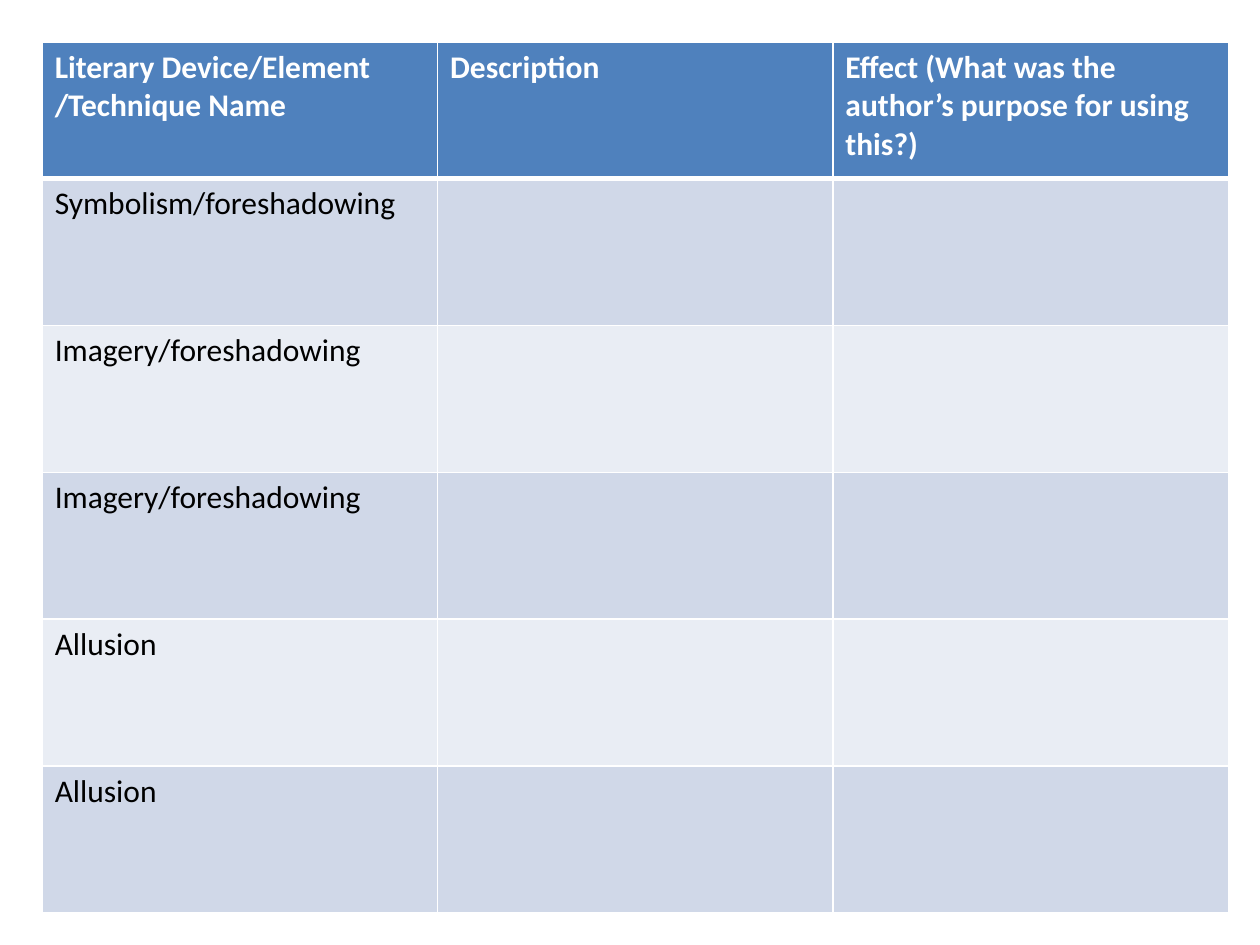
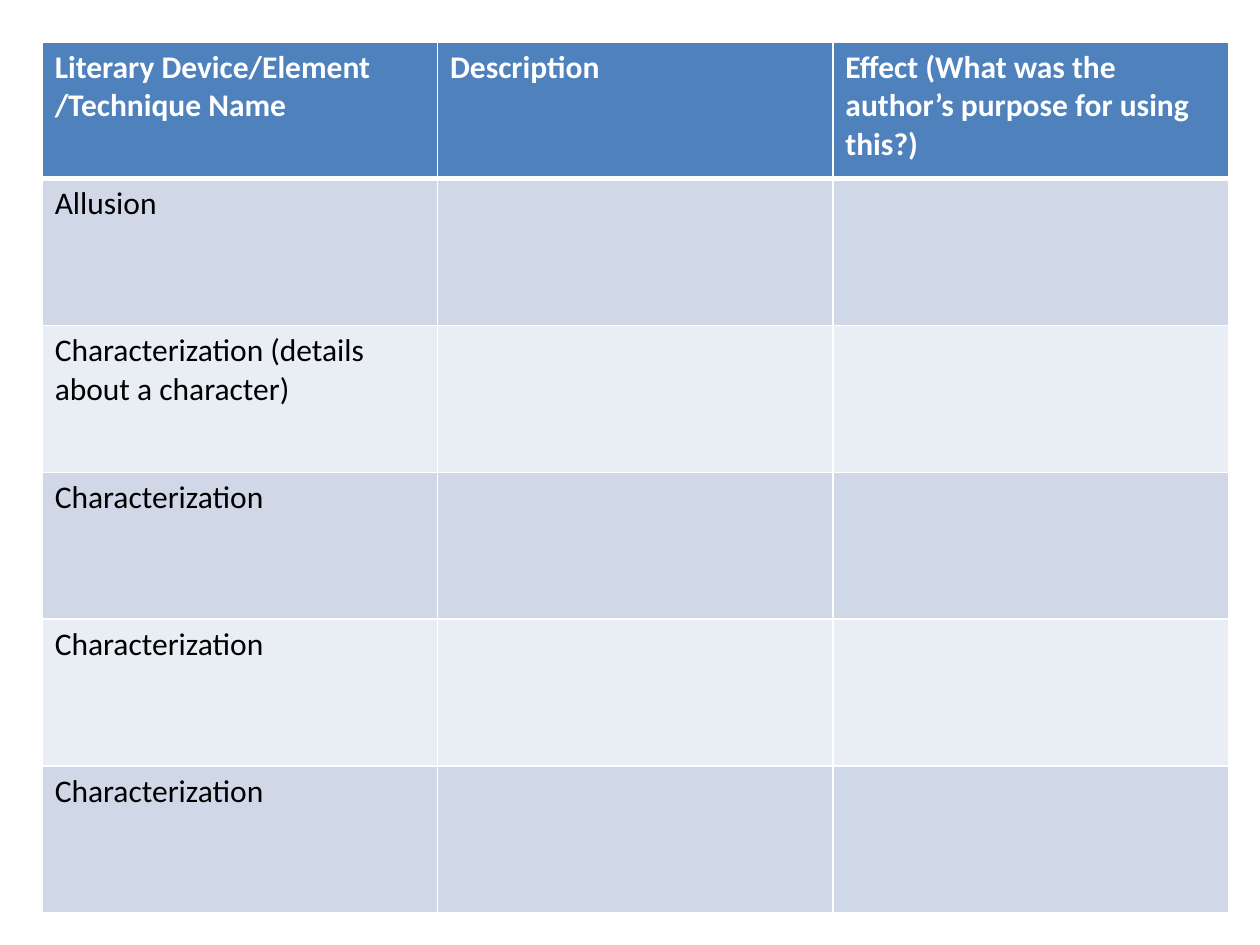
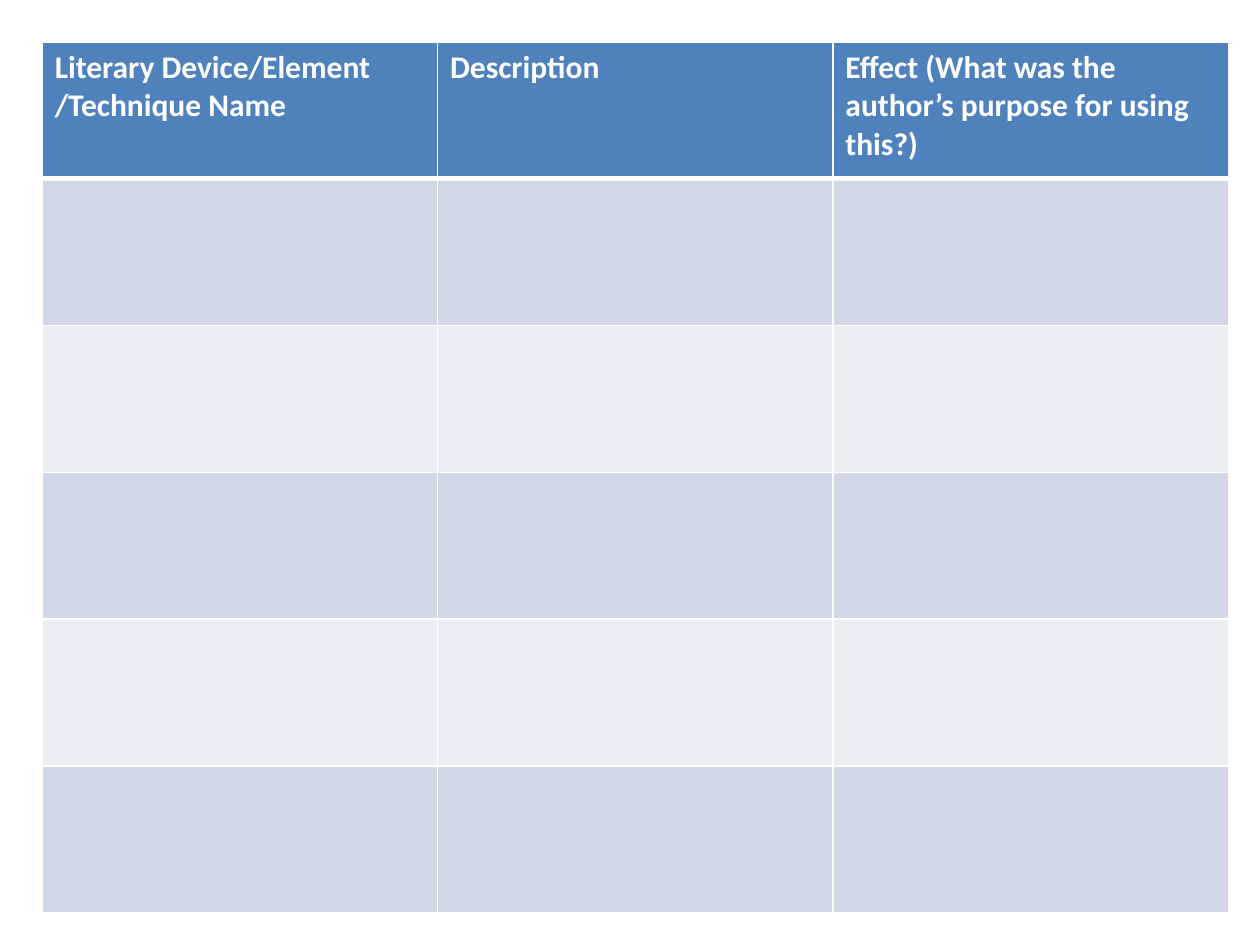
from dataclasses import dataclass

from lxml.etree import SubElement
from pptx import Presentation
from pptx.dml.color import RGBColor
from pptx.oxml.ns import qn
from pptx.presentation import Presentation as Deck
from pptx.table import _Cell
from pptx.util import Cm, Pt

COLOURS = {
    "header": "4F81BD",
    "band_dark": "D0D8E8",
    "band_light": "E9EDF4",
    "white": "FFFFFF",
    "black": "000000",
}
FONT = "Calibri"
TABLE_LEFT = TABLE_TOP = Cm(0.85)
COLUMN_WIDTH = Cm(7.97)
HEADER_HEIGHT = Cm(2.75)
ROW_HEIGHT = Cm(2.96)
THIN, THICK = Pt(1), Pt(3)
BLANK_LAYOUT = 6
HEADINGS = (
    "Literary Device/Element /Technique Name",
    "Description",
    "Effect (What was the author’s purpose for using this?)",
)


@dataclass(frozen=True)
class Worksheet:
    """Device names in the first column of one worksheet table."""

    devices: tuple[str, ...]


WORKSHEETS = (
    Worksheet(
        (
            "Symbolism/foreshadowing",
            "Imagery/foreshadowing",
            "Imagery/foreshadowing",
            "Allusion",
            "Allusion",
        )
    ),
    Worksheet(
        (
            "Allusion",
            "Characterization (details about a character)",
            "Characterization",
            "Characterization",
            "Characterization",
        )
    ),
    Worksheet(("",) * 5),
)


def write_text(
    cell: _Cell, text: str, *, colour: str, bold: bool = False, size: int = 18
) -> None:
    """Write formatted text in a cell."""
    paragraph = cell.text_frame.paragraphs[0]
    run = paragraph.add_run()
    run.text = text
    run.font.name = FONT
    run.font.size = Pt(size)
    run.font.bold = bold
    run.font.color.rgb = RGBColor.from_string(COLOURS[colour])


def set_borders(cell: _Cell, *, top: int = THIN, bottom: int = THIN) -> None:
    """Draw white borders on the four sides of a cell."""
    properties = cell._tc.get_or_add_tcPr()
    sides = {"a:lnL": THIN, "a:lnR": THIN, "a:lnT": top, "a:lnB": bottom}
    for tag, width in sides.items():
        line = SubElement(properties, qn(tag), w=str(width))
        fill = SubElement(line, qn("a:solidFill"))
        SubElement(fill, qn("a:srgbClr"), val=COLOURS["white"])


def set_fill(cell: _Cell, colour: str) -> None:
    """Fill a cell with a named colour."""
    cell.fill.solid()
    cell.fill.fore_color.rgb = RGBColor.from_string(COLOURS[colour])


def add_worksheet(presentation: Deck, worksheet: Worksheet) -> None:
    """Add a slide with a header row and one banded row per device."""
    slide = presentation.slides.add_slide(presentation.slide_layouts[BLANK_LAYOUT])
    row_count = len(worksheet.devices) + 1
    table = slide.shapes.add_table(
        row_count,
        len(HEADINGS),
        TABLE_LEFT,
        TABLE_TOP,
        COLUMN_WIDTH * len(HEADINGS),
        HEADER_HEIGHT + ROW_HEIGHT * len(worksheet.devices),
    ).table

    for column in table.columns:
        column.width = COLUMN_WIDTH
    for index, row in enumerate(table.rows):
        row.height = ROW_HEIGHT if index else HEADER_HEIGHT

    for cell, heading in zip(table.rows[0].cells, HEADINGS):
        write_text(cell, heading, colour="white", bold=True)
        set_borders(cell, bottom=THICK)
        set_fill(cell, "header")

    for index, device in enumerate(worksheet.devices, start=1):
        if device:
            write_text(table.cell(index, 0), device, colour="black")
        for cell in table.rows[index].cells:
            set_borders(cell, top=THICK if index == 1 else THIN)
            set_fill(cell, "band_dark" if index % 2 else "band_light")


def main() -> None:
    """Build and save the worksheets."""
    presentation = Presentation()
    presentation.slide_width = Cm(25.4)
    presentation.slide_height = Cm(19.05)
    for worksheet in WORKSHEETS:
        add_worksheet(presentation, worksheet)
    presentation.save("out.pptx")


if __name__ == "__main__":
    main()
